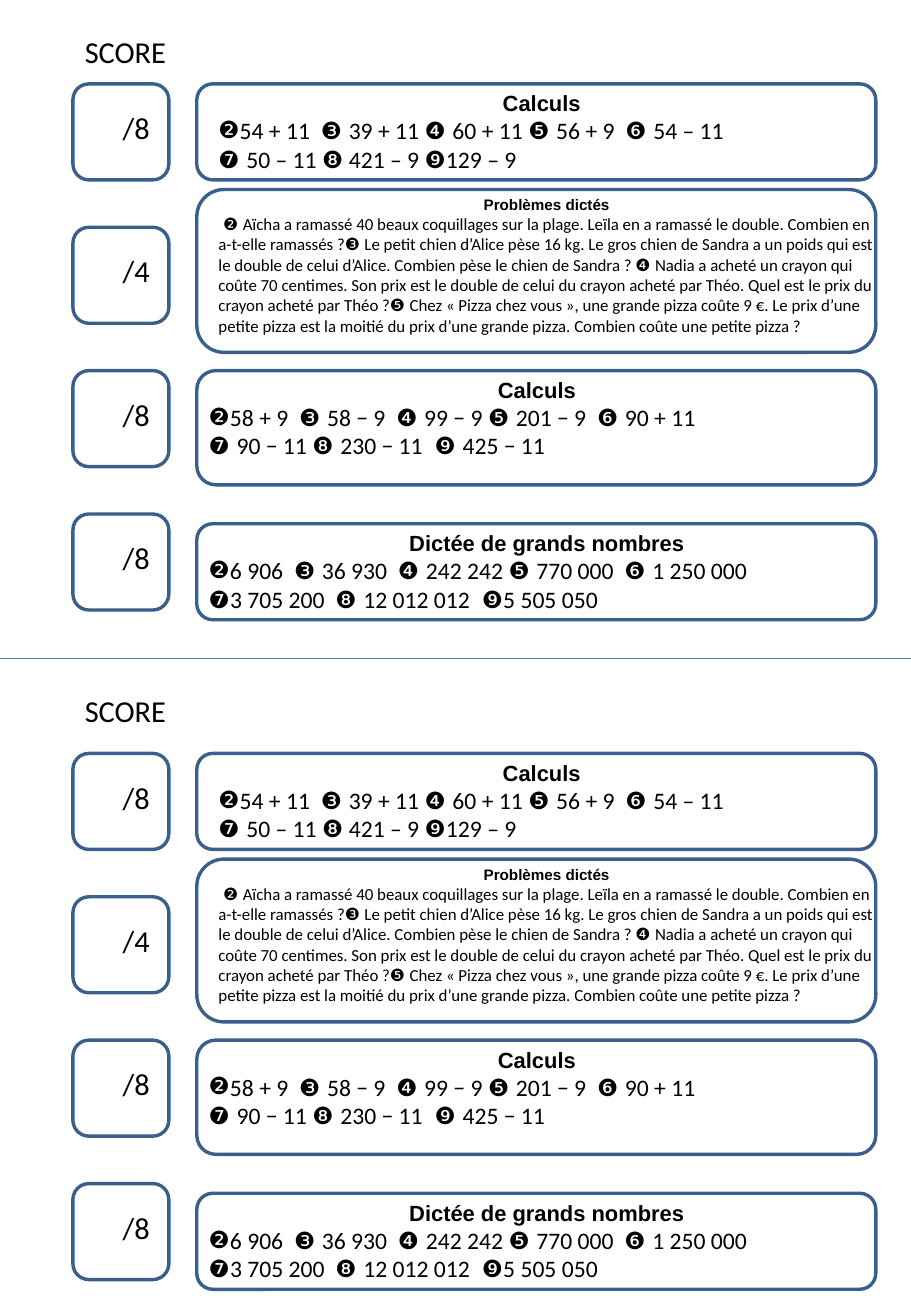
"""Build a two-up mental arithmetic score sheet."""
from lxml import etree
from pptx import Presentation
from pptx.dml.color import RGBColor
from pptx.enum import shapes, text
from pptx.oxml import ns
from pptx.util import Inches, Pt

COLORS = {"border": "3A5F8C", "divider": "4B7EBC", "text": "000000"}
CIRCLED = "❷❸❹❺❻❼❽❾"
SCORES = ["/8", "/4", "/8", "/8"]

# "|" separates the numbered markers from the text beside them.
PANELS = [
    {"title": "Calculs", "top": 0.69, "height": 0.79,
     "text_left": 1.7, "text_width": 5.51, "sizes": (13, 14), "bullet": "❷",
     "lines": ["54 + 11  |❸ |39 + 11 |❹ |60 + 11 |❺ |56 + 9  |❻ |54 – 11",
               "❼ |50 – 11 |❽| 421 – 9 |❾|129 – 9"]},
    {"title": "Problèmes dictés", "top": 1.56, "height": 1.34,
     "text_left": 1.7, "text_width": 5.59, "sizes": (9, 10), "bullet": None,
     "lines": [" ❷ |Aïcha a ramassé 40 beaux coquillages sur la plage. "
               "Leïla en a ramassé le double. Combien en a-t-elle ramassés ?|❸ |"
               "Le petit chien d’Alice pèse 16 kg. Le gros chien de Sandra a un poids "
               "qui est le double de celui d’Alice. Combien pèse le chien de Sandra ? |❹ |"
               "Nadia a acheté un crayon qui coûte 70 centimes. Son prix est le double "
               "de celui du crayon acheté par Théo. Quel est le prix du crayon acheté "
               "par Théo ?|❺ |Chez « Pizza chez vous », une grande pizza coûte 9 €. "
               "Le prix d’une petite pizza est la moitié du prix d’une grande pizza. "
               "Combien coûte une petite pizza ?"]},
    {"title": "Calculs", "top": 3.05, "height": 0.94,
     "text_left": 1.62, "text_width": 5.59, "sizes": (13, 14), "bullet": "❷",
     "lines": ["58 + 9  |❸ |58 − 9  |❹ |99 − 9 |❺ |201 − 9  |❻ |90 + 11",
               "❼ |90 − 11 |❽ |230 − 11 | ❾ |425 − 11"]},
    {"title": "Dictée de grands nombres", "top": 4.31, "height": 0.79,
     "text_left": 1.62, "text_width": 5.75, "sizes": (13, 14), "bullet": "❷",
     "lines": ["6 906  |❸ |36 930  |❹ |242 242 |❺ |770 000  |❻ |1 250 000",
               "❼|3 705 200  |❽ |12 012 012 | ❾|5 505 050"]},
]

SHEETS = [{"score_top": 0.22, "offset": 0}, {"score_top": 5.65, "offset": 5.51}]
SCORE_LEFT, SCORE_TOP, SCORE_SIZE, SCORE_PITCH = 0.6, 0.69, 0.79, 1.18
PANEL_LEFT, PANEL_WIDTH = 1.62, 5.59
PAGE_WIDTH, PAGE_HEIGHT, DIVIDER_TOP = 7.5, 10.83, 5.42


def color(name):
    return RGBColor.from_string(COLORS[name])


def add_frame(slide, left, top, width, height):
    shape = slide.shapes.add_shape(
        shapes.MSO_SHAPE.FLOWCHART_ALTERNATE_PROCESS,
        Inches(left), Inches(top), Inches(width), Inches(height))
    shape.shadow.inherit = False
    shape.fill.background()
    shape.line.color.rgb = color("border")
    shape.line.width = Pt(2)


def add_text(slide, left, top, width, height, inset=0.1):
    box = slide.shapes.add_textbox(Inches(left), Inches(top), Inches(width), Inches(height))
    frame = box.text_frame
    frame.word_wrap = True
    frame.margin_left = Inches(inset)
    frame.margin_right = Inches(0.09)
    return frame


def style(paragraph, size, font="Calibri", bold=False):
    paragraph.font.size = Pt(size)
    paragraph.font.name = font
    paragraph.font.bold = bold
    paragraph.font.color.rgb = color("text")


def add_label(slide, label, *place, inset=0.1):
    paragraph = add_text(slide, *place, inset=inset).paragraphs[0]
    paragraph.text = label
    style(paragraph, 18)


def add_bullet(paragraph, character):
    properties = paragraph._p.get_or_add_pPr()
    font = etree.Element(ns.qn("a:buFont"), typeface="Arial")
    bullet = etree.Element(ns.qn("a:buChar"), char=character)
    properties.insert(0, font)
    properties.insert(1, bullet)


def add_panel(slide, panel, offset):
    top = panel["top"] + offset
    add_frame(slide, PANEL_LEFT, top, PANEL_WIDTH, panel["height"])
    frame = add_text(slide, panel["text_left"], top, panel["text_width"], panel["height"])
    title_size, body_size = panel["sizes"]
    title = frame.paragraphs[0]
    title.text = panel["title"]
    title.alignment = text.PP_ALIGN.CENTER
    style(title, title_size, "Arial", True)
    for index, line in enumerate(panel["lines"]):
        paragraph = frame.add_paragraph()
        style(paragraph, body_size)
        if index == 0 and panel["bullet"]:
            add_bullet(paragraph, panel["bullet"])
        for part in line.split("|"):
            run = paragraph.add_run()
            run.text = part
            run.font.name = "Arial" if part.strip() in CIRCLED else "Calibri"


def add_sheet(slide, score_top, offset):
    add_label(slide, "SCORE", SCORE_LEFT, score_top, 1.34, 0.4)
    for row, score in enumerate(SCORES):
        top = SCORE_TOP + offset + row * SCORE_PITCH
        add_frame(slide, SCORE_LEFT, top, SCORE_SIZE, SCORE_SIZE)
        add_label(slide, score, SCORE_LEFT + 0.08, top + 0.16, SCORE_SIZE, 0.4, inset=0.33)
    for panel in PANELS:
        add_panel(slide, panel, offset)


def main():
    presentation = Presentation()
    presentation.slide_width = Inches(PAGE_WIDTH)
    presentation.slide_height = Inches(PAGE_HEIGHT)
    slide = presentation.slides.add_slide(presentation.slide_layouts[6])
    divider = slide.shapes.add_connector(
        shapes.MSO_CONNECTOR.STRAIGHT, 0, Inches(DIVIDER_TOP),
        Inches(PAGE_WIDTH), Inches(DIVIDER_TOP))
    divider.line.color.rgb = color("divider")
    divider.line.width = Pt(0.75)
    etree.SubElement(divider._element.spPr, ns.qn("a:effectLst"))
    for sheet in SHEETS:
        add_sheet(slide, **sheet)
    presentation.save("out.pptx")


if __name__ == "__main__":
    main()
